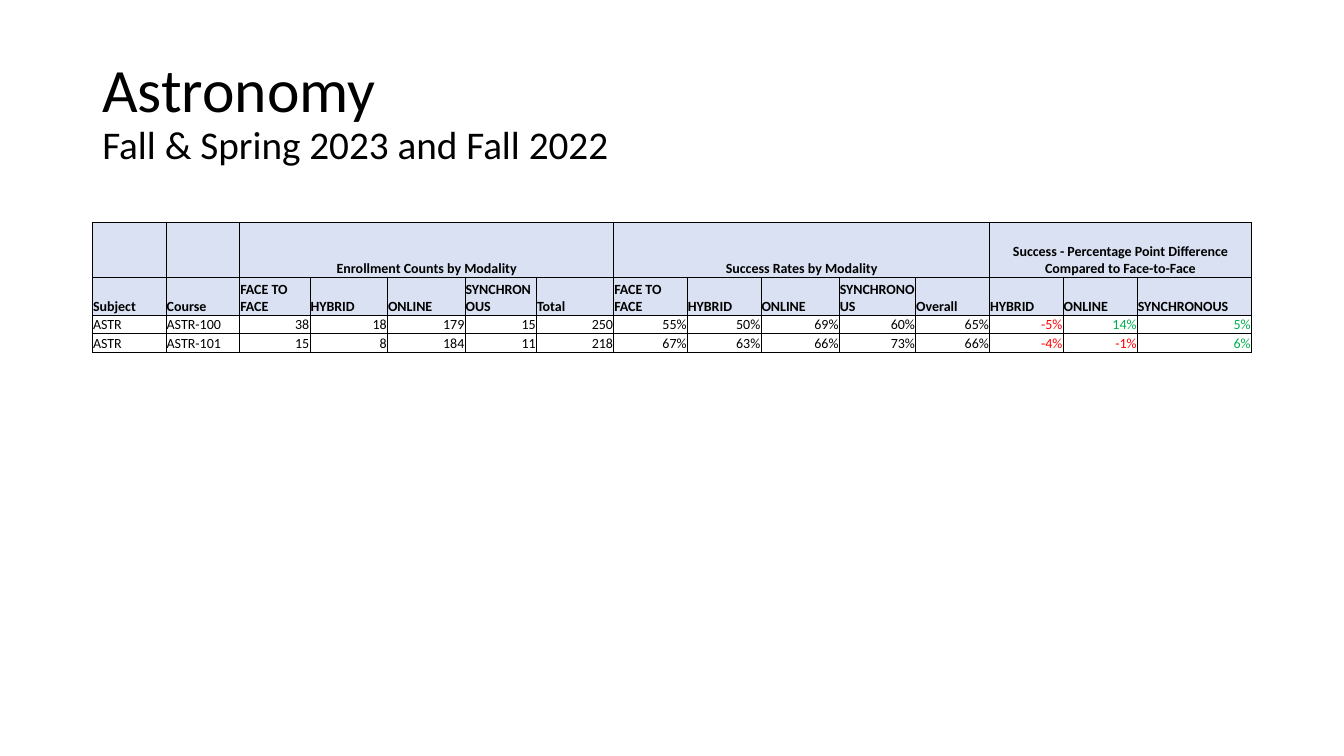
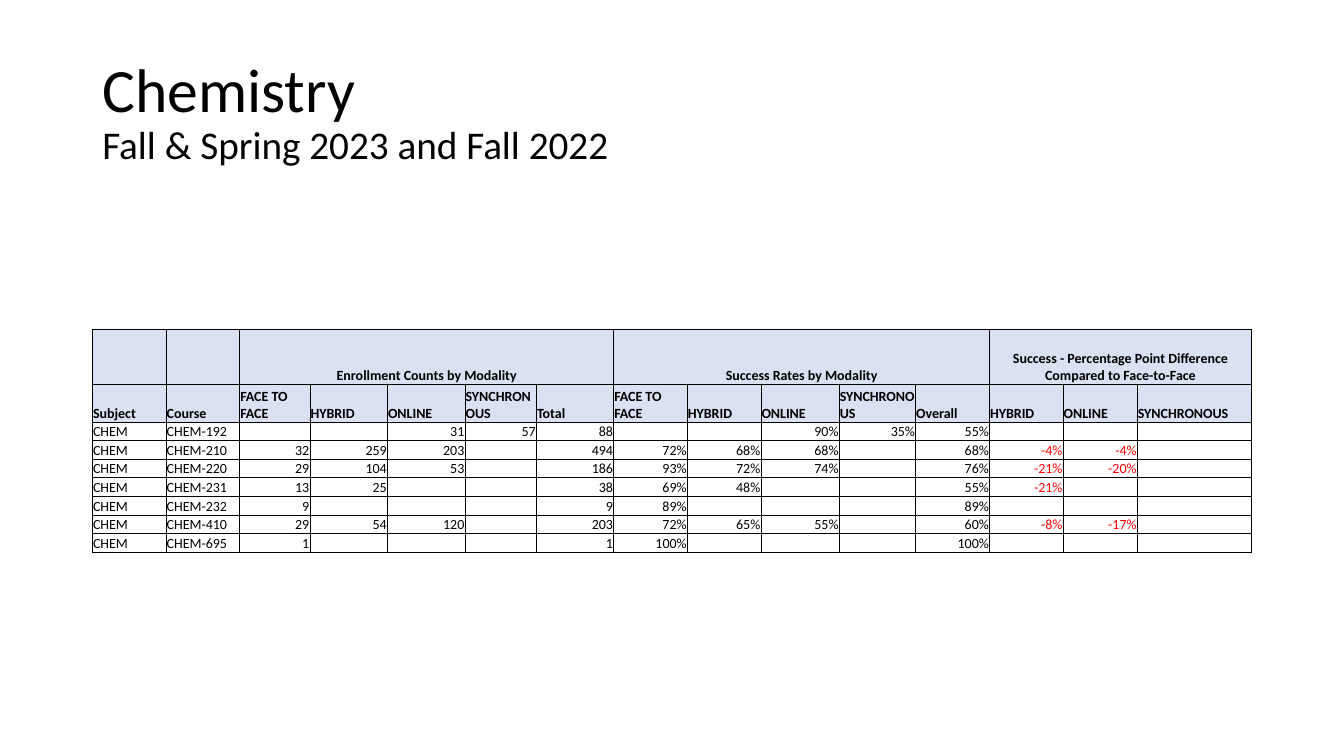
"""Build the course success slides, one subject on each slide."""
import lxml.etree
import pptx
import pptx.dml.color
import pptx.enum.text
import pptx.oxml.ns
import pptx.util

Pt = pptx.util.Pt
RGBColor = pptx.dml.color.RGBColor
Align = pptx.enum.text.PP_ALIGN
Anchor = pptx.enum.text.MSO_ANCHOR
qn = pptx.oxml.ns.qn

BLACK = RGBColor(0x00, 0x00, 0x00)
BLUE = RGBColor(0xD9, 0xE1, 0xF2)
RED = RGBColor(0xFF, 0x00, 0x00)
GREEN = RGBColor(0x00, 0xB0, 0x50)

TERM = "Fall & Spring 2023 and Fall 2022"
MODES = ["HYBRID", "ONLINE", "SYNCHRONOUS"]
HEADS = ["Subject", "Course", "FACE TO FACE", *MODES, "Total",
         "FACE TO FACE", *MODES, "Overall", *MODES]
GROUPS = [
    (2, 6, "Enrollment Counts by Modality"),
    (7, 11, "Success Rates by Modality"),
    (12, 14, "Success - Percentage Point Difference Compared to Face-to-Face"),
]
GAP_COL = GROUPS[-1][0]
WIDTHS = [52.6, 52.6, 50.2, 55.4, 55.4, 51, 55.2, 52.6,
          52.6, 55.9, 54.6, 52.8, 52.6, 53, 81.5]
TOP_ROW, HEAD_ROW, DATA_ROW = 39, 27, 13.3

ASTRO = [
    "ASTR-100,38,18,179,15,250,55%,50%,69%,60%,65%,-5%,14%,5%",
    "ASTR-101,15,8,184,11,218,67%,63%,66%,73%,66%,-4%,-1%,6%",
]
CHEM = [
    "CHEM-192,,,31,57,88,,,90%,35%,55%,,,",
    "CHEM-210,32,259,203,,494,72%,68%,68%,,68%,-4%,-4%,",
    "CHEM-220,29,104,53,,186,93%,72%,74%,,76%,-21%,-20%,",
    "CHEM-231,13,25,,,38,69%,48%,,,55%,-21%,,",
    "CHEM-232,9,,,,9,89%,,,,89%,,,",
    "CHEM-410,29,54,120,,203,72%,65%,55%,,60%,-8%,-17%,",
    "CHEM-695,1,,,,1,100%,,,,100%,,,",
]


class Deck:
    """Hold the shared style and the current slide."""

    font = "Calibri"
    left = 66
    width = 828

    def __init__(self):
        """Start an empty wide deck."""
        self.show = pptx.Presentation()
        self.show.slide_width = Pt(960)
        self.show.slide_height = Pt(540)
        self.slide = None

    def page(self):
        """Add a blank slide and make it current."""
        self.slide = self.show.slides.add_slide(self.show.slide_layouts[6])

    def style(self, para, size, color=BLACK, bold=False):
        """Set the font of one paragraph."""
        font = para.font
        font.name, font.size, font.bold = self.font, Pt(size), bold
        font.color.rgb = color

    def title(self, name, term):
        """Add the subject name with the term below it."""
        box = self.slide.shapes.add_textbox(
            Pt(self.left), Pt(28.75), Pt(self.width), Pt(104.4))
        frame = box.text_frame
        frame.word_wrap = True
        frame.vertical_anchor = Anchor.MIDDLE
        para = frame.paragraphs[0]
        para.line_spacing = 0.9
        self.style(para, 44)
        para.add_run().text = name
        para.add_line_break()
        run = para.add_run()
        run.text = term
        run.font.size = Pt(28)

    def border(self, cell):
        """Draw a thin black line on each side of a cell."""
        props = cell._tc.get_or_add_tcPr()
        for side in ("a:lnL", "a:lnR", "a:lnT", "a:lnB"):
            line = lxml.etree.SubElement(props, qn(side), w=str(Pt(0.5)))
            fill = lxml.etree.SubElement(line, qn("a:solidFill"))
            lxml.etree.SubElement(fill, qn("a:srgbClr"), val=str(BLACK))

    def cell(self, cell, text, align=Align.LEFT, color=BLACK, head=False):
        """Fill and style one table cell."""
        self.border(cell)
        if head:
            cell.fill.solid()
            cell.fill.fore_color.rgb = BLUE
        else:
            cell.fill.background()
        cell.margin_left = cell.margin_right = cell.margin_top = Pt(0.5)
        cell.margin_bottom = 0
        cell.vertical_anchor = Anchor.BOTTOM
        cell.text = text
        para = cell.text_frame.paragraphs[0]
        para.alignment = align
        self.style(para, 10, color, head)
        if not text:
            lxml.etree.SubElement(para._p, qn("a:endParaRPr"), sz="1000")

    def table(self, top, lines):
        """Add the table of counts, rates and gaps."""
        highs = [TOP_ROW, HEAD_ROW] + [DATA_ROW] * len(lines)
        grid = self.slide.shapes.add_table(
            len(highs), len(WIDTHS), Pt(self.left), Pt(top),
            Pt(self.width), Pt(sum(highs))).table
        grid.first_row = grid.horz_banding = False
        for col, width in zip(grid.columns, WIDTHS):
            col.width = Pt(width)
        for row, high in zip(grid.rows, highs):
            row.height = Pt(high)
        names = {first: name for first, last, name in GROUPS}
        for col, head in enumerate(HEADS):
            self.cell(grid.cell(0, col), names.get(col, ""),
                      Align.CENTER, head=True)
            self.cell(grid.cell(1, col), head, head=True)
        for first, last, name in GROUPS:
            grid.cell(0, first).merge(grid.cell(0, last))
        for row, line in enumerate(lines, 2):
            texts = [line.split("-")[0], *line.split(",")]
            for col, text in enumerate(texts):
                align = Align.LEFT if col < 2 else Align.RIGHT
                color = BLACK
                if col >= GAP_COL:
                    color = RED if text.startswith("-") else GREEN
                self.cell(grid.cell(row, col), text, align, color)


def main():
    """Build both slides and save the deck."""
    deck = Deck()
    for name, top, lines in (("Astronomy", 159, ASTRO),
                             ("Chemistry", 235.4, CHEM)):
        deck.page()
        deck.title(name, TERM)
        deck.table(top, lines)
    deck.show.save("out.pptx")


if __name__ == "__main__":
    main()
